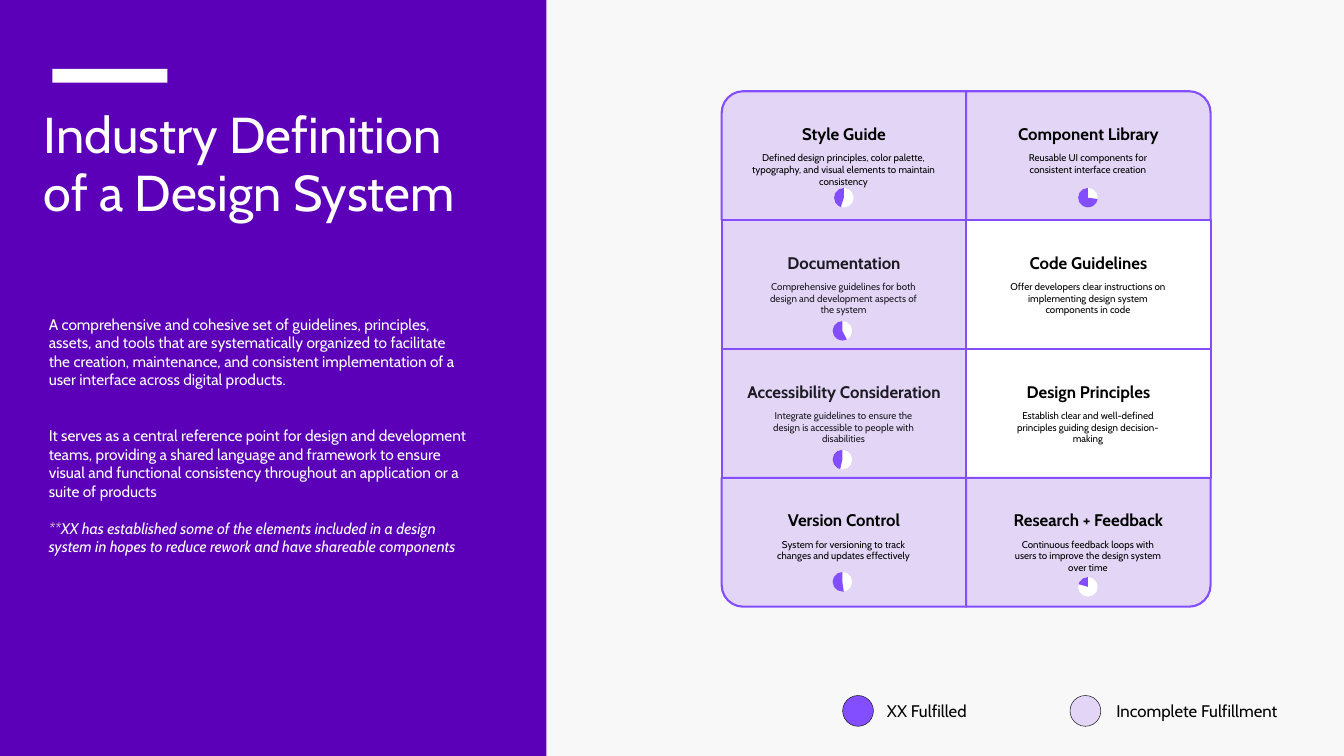
from pptx import Presentation
from pptx.dml.color import RGBColor
from pptx.enum.shapes import MSO_SHAPE
from pptx.enum.text import MSO_ANCHOR, MSO_AUTO_SIZE, PP_ALIGN
from pptx.oxml.ns import qn
from pptx.util import Pt

RECTANGLE = MSO_SHAPE.RECTANGLE
ROUND_CORNER = MSO_SHAPE.ROUND_1_RECTANGLE
OVAL = MSO_SHAPE.OVAL
PIE = MSO_SHAPE.PIE
LEFT, CENTER = PP_ALIGN.LEFT, PP_ALIGN.CENTER
TOP = MSO_ANCHOR.TOP
GROW, FIXED = MSO_AUTO_SIZE.SHAPE_TO_FIT_TEXT, MSO_AUTO_SIZE.NONE

COLORS = {
    "background": "F8F8F8",
    "panel": "5B00B8",
    "accent": "834EFF",
    "lilac": "E2D5F5",
    "white": "FFFFFF",
    "black": "000000",
    "ink": "1C1A23",
}
FONT = "Cabin"

GRID_LEFT, GRID_TOP = 1031, 130.3
CARD_WIDTH, CARD_HEIGHT = 349.2, 184.1
CORNER = 0.167
GAUGE_SIZE = 28
PIE_UNITS_PER_DEGREE = 0.6

CARDS = [
    [
        dict(heading="Style Guide",
             detail="Defined design principles, color palette, typography, "
                    "and visual elements to maintain consistency",
             detail_width=320, gauge=(107.59, 160.5, 138.2)),
        dict(heading="Component Library",
             detail="Reusable UI components for consistent interface creation",
             lines=2, gauge=(7.56, 160, 138.2)),
    ],
    [
        dict(heading="Documentation",
             detail="Comprehensive guidelines for both design and development "
                    "aspects of the system",
             color="ink", gauge=(63.01, 158.4, 144.2)),
        dict(heading="Code Guidelines",
             detail="Offer developers clear instructions on implementing "
                    "design system components in code",
             fill="white"),
    ],
    [
        dict(heading="Accessibility Consideration",
             detail="Integrate guidelines to ensure the design is accessible "
                    "to people with disabilities",
             color="ink", heading_width=CARD_WIDTH, gauge=(102.93, 158.4, 144)),
        dict(heading="Design Principles",
             detail="Establish clear and well-defined principles guiding "
                    "design decision-making",
             fill="white"),
    ],
    [
        dict(heading="Version Control",
             detail="System for versioning to track changes and updates effectively",
             lines=2, gauge=(81.68, 158.4, 134.6)),
        dict(heading="Research + Feedback",
             detail="Continuous feedback loops with users to improve the "
                    "design system over time",
             gauge=(195.93, 160, 141.8)),
    ],
]

INTRODUCTION = [
    ("A comprehensive and cohesive set of guidelines, principles, assets, and "
     "tools that are systematically organized to facilitate the creation, "
     "maintenance, and consistent implementation of a user interface across "
     "digital products.", 0, False),
    ("It serves as a central reference point for design and development teams, "
     "providing a shared language and framework to ensure visual and functional "
     "consistency throughout an application or a suite of products", 53.5, False),
    ("**XX has established some of the elements included in a design system in "
     "hopes to reduce rework and have shareable components", 26.7, True),
]

LEGEND = [
    ("XX Fulfilled", "accent", 1203.8, 1260, 236),
    ("Incomplete Fulfillment", "lilac", 1528.6, 1587.6, 289.4),
]


def rgb(name):
    return RGBColor.from_string(COLORS[name])


class SlideBuilder:
    def __init__(self, slide, font):
        self.slide = slide
        self.font = font

    def background(self, color):
        fill = self.slide.background.fill
        fill.solid()
        fill.fore_color.rgb = rgb(color)

    def shape(self, kind, left, top, width, height, fill,
              line=None, line_width=1, parent=None):
        shapes = (parent or self.slide).shapes
        shape = shapes.add_shape(kind, Pt(left), Pt(top), Pt(width), Pt(height))
        shape.shadow.inherit = False
        shape.fill.solid()
        shape.fill.fore_color.rgb = rgb(fill)
        if line:
            shape.line.color.rgb = rgb(line)
            shape.line.width = Pt(line_width)
        else:
            shape.line.fill.background()
        return shape

    def run(self, paragraph, text, size, color, bold=False, italic=False):
        run = paragraph.add_run()
        run.text = text
        run.font.name = self.font
        run.font.size = Pt(size)
        run.font.bold = bold
        run.font.italic = italic
        run.font.color.rgb = rgb(color)

    def frame(self, shape, inset, auto_size):
        frame = shape.text_frame
        frame.word_wrap = True
        frame.auto_size = auto_size
        frame.vertical_anchor = TOP
        frame.margin_left = frame.margin_right = Pt(inset)
        frame.margin_top = frame.margin_bottom = Pt(inset)
        return frame

    def title(self, text, left, top, width, height):
        title = self.slide.shapes.title
        title.left, title.top = Pt(left), Pt(top)
        title.width, title.height = Pt(width), Pt(height)
        paragraph = self.frame(title, 0, FIXED).paragraphs[0]
        paragraph.alignment = LEFT
        paragraph.line_spacing = 0.97
        self.run(paragraph, text, 72, "white")

    def text(self, paragraphs, left, top, width, height, size, color,
             align=LEFT, bold=False):
        box = self.slide.shapes.add_textbox(Pt(left), Pt(top), Pt(width), Pt(height))
        frame = self.frame(box, 7.2, GROW)
        for index, (text, space_before, italic) in enumerate(paragraphs):
            paragraph = frame.add_paragraph() if index else frame.paragraphs[0]
            paragraph.alignment = align
            paragraph.space_before = Pt(space_before)
            self.run(paragraph, text, size, color, bold, italic)

    def gauge(self, left, top, start_degrees):
        group = self.slide.shapes.add_group_shape()
        area = (left, top, GAUGE_SIZE, GAUGE_SIZE)
        self.shape(OVAL, *area, "white", parent=group)
        pie = self.shape(PIE, *area, "accent", parent=group)
        pie.adjustments[0] = start_degrees * PIE_UNITS_PER_DEGREE
        pie.adjustments[1] = 270 * PIE_UNITS_PER_DEGREE

    def card(self, row, column, heading, detail, fill="lilac", color="black",
             heading_width=289.4, detail_width=236, lines=3, gauge=None):
        left = GRID_LEFT + column * CARD_WIDTH
        top = GRID_TOP + row * CARD_HEIGHT
        last_row = len(CARDS) - 1
        shape = self.shape(ROUND_CORNER, left, top, CARD_WIDTH, CARD_HEIGHT,
                           fill, "accent", 3)
        shape.adjustments[0] = CORNER if row in (0, last_row) else 0
        transform = shape.element.spPr.find(qn("a:xfrm"))
        if column == 0:
            transform.set("flipH", "1")
        if row == last_row:
            transform.set("flipV", "1")
        self.text([(heading, 0, False)], left + (CARD_WIDTH - heading_width) / 2,
                  top + 39, heading_width, 44, 24, color, CENTER, bold=True)
        self.text([(detail, 0, False)], left + (CARD_WIDTH - detail_width) / 2 - 0.5,
                  top + 79.3, detail_width, 14.4 + 17 * lines, 14, color, CENTER)
        if gauge:
            degrees, offset_left, offset_top = gauge
            self.gauge(left + offset_left, top + offset_top, degrees)

    def legend_entry(self, label, fill, circle_left, text_left, text_width):
        self.shape(OVAL, circle_left, 993.6, 44, 44, fill, "ink", 0.75)
        self.text([(label, 0, False)], text_left, 993.6, text_width, 44, 24, "black")


def main():
    presentation = Presentation()
    presentation.slide_width, presentation.slide_height = Pt(1920), Pt(1080)
    slide = presentation.slides.add_slide(presentation.slide_layouts[5])
    builder = SlideBuilder(slide, FONT)
    builder.background("background")
    panel = builder.shape(RECTANGLE, 0, 0, 780.5, 1080, "panel")
    brand_bar = builder.shape(RECTANGLE, 75, 98.6, 164, 19.4, "white")
    for shape in (panel, brand_bar):
        slide.shapes.title.element.addprevious(shape.element)
    builder.title("Industry Definition of a Design System", 62.6, 152, 598.3, 184.3)
    builder.text(INTRODUCTION, 62.6, 442.8, 616.3, 414.7, 22, "white")
    for row, cards in enumerate(CARDS):
        for column, card in enumerate(cards):
            builder.card(row, column, **card)
    for entry in LEGEND:
        builder.legend_entry(*entry)
    presentation.save("out.pptx")


if __name__ == "__main__":
    main()
